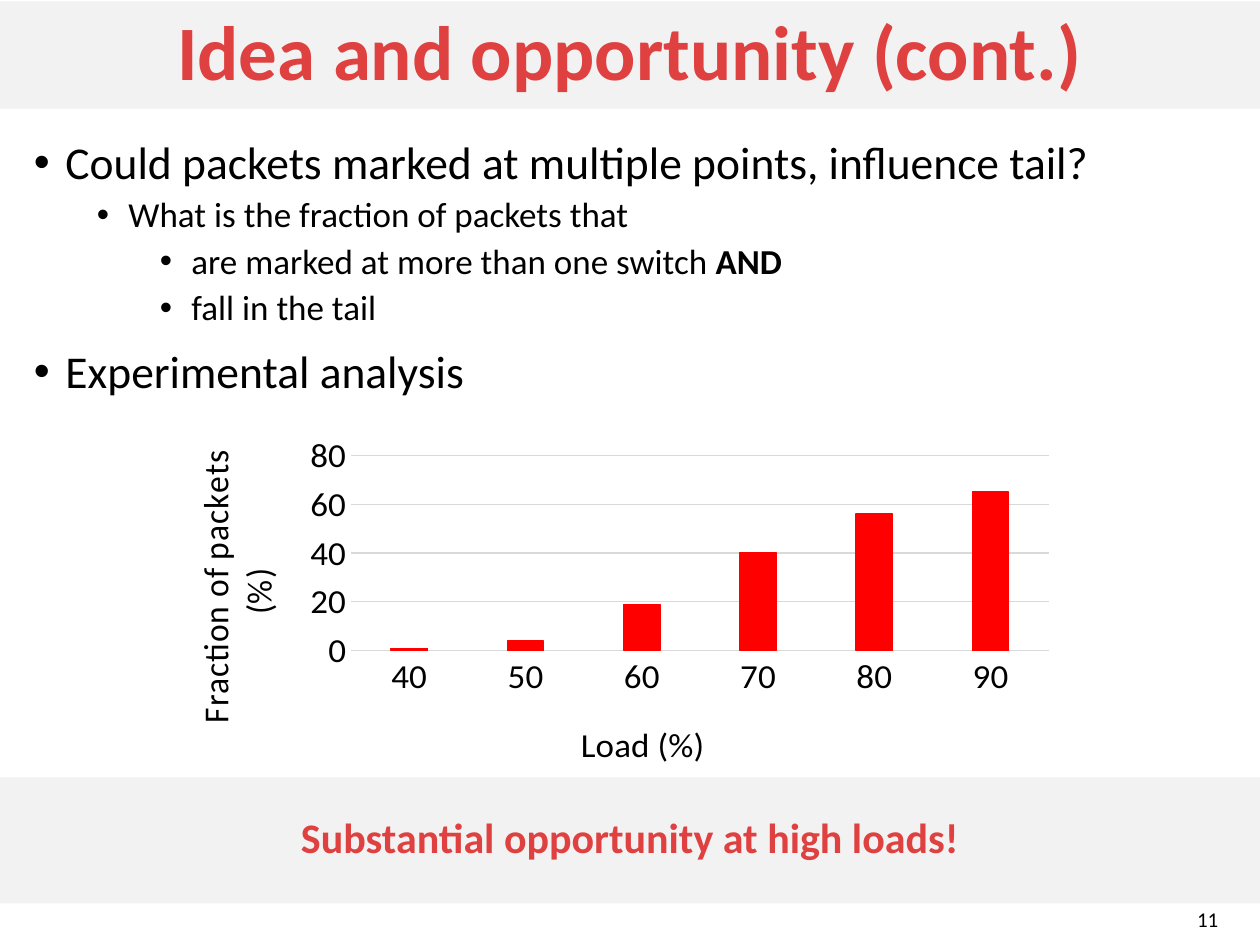
from lxml import etree
from pptx import Presentation
from pptx.chart.data import CategoryChartData
from pptx.dml.color import RGBColor
from pptx.enum.chart import XL_CHART_TYPE as CT, XL_TICK_MARK as TM
from pptx.enum.text import MSO_ANCHOR as MA, MSO_AUTO_SIZE as AS, PP_ALIGN as PA
from pptx.oxml import parse_xml
from pptx.oxml.ns import nsdecls, qn
from pptx.util import Cm, Pt

COLORS = {"band": "F2F2F2", "accent": "DF4141", "text": "000000",
          "grid": "D9D9D9", "bar": "FF0000"}


def rgb(name):
    return RGBColor.from_string(COLORS[name])


class SlideBuilder:
    font = "Calibri"
    sizes = (26, 20, 20)

    def __init__(self, prs):
        self.slide = prs.slides.add_slide(prs.slide_layouts[3])

    def style(self, font, size, color="text", bold=False):
        font.name, font.size, font.bold = self.font, Pt(size), bold
        font.color.rgb = rgb(color)

    def place(self, idx, box):
        sp = self.slide.placeholders[idx]
        sp.left, sp.top, sp.width, sp.height = (Cm(v) for v in box)
        sp.text_frame.auto_size = AS.NONE
        return sp

    def band(self, idx, box, text, size, before=0):
        sp = self.place(idx, box)
        sp.fill.solid()
        sp.fill.fore_color.rgb = rgb("band")
        tf = sp.text_frame
        tf.text = text
        tf.vertical_anchor = MA.MIDDLE
        p = tf.paragraphs[0]
        p.alignment, p.line_spacing, p.space_before = PA.CENTER, 0.9, Pt(before)
        pPr = p._p.get_or_add_pPr()
        pPr.set("marL", "0")
        pPr.set("indent", "0")
        etree.SubElement(pPr, qn("a:buNone"))
        self.style(p.runs[0].font, size, "accent", True)

    def bullets(self, idx, box, items):
        tf = self.place(idx, box).text_frame
        for i, (level, text, strong) in enumerate(items):
            p = tf.add_paragraph() if i else tf.paragraphs[0]
            p.text = text
            p.level, p.line_spacing = level, 0.9
            p.space_before = Pt(5 if level else 12)
            pPr = p._p.get_or_add_pPr()
            pPr.set("marL", str(Cm(0.635 + 1.27 * level)))
            pPr.set("indent", str(-Cm(0.635)))
            etree.SubElement(pPr, qn("a:buFont"), typeface="Arial")
            etree.SubElement(pPr, qn("a:buChar"), char="•")
            self.style(p.runs[0].font, self.sizes[level])
            if strong:
                r = p.add_run()
                r.text = strong
                self.style(r.font, self.sizes[level], bold=True)

    def label(self, box, text, size):
        tf = self.slide.shapes.add_textbox(*(Cm(v) for v in box)).text_frame
        tf.word_wrap, tf.vertical_anchor = True, MA.MIDDLE
        tf.text = text
        p = tf.paragraphs[0]
        p.alignment = PA.RIGHT
        self.style(p.runs[0].font, size)

    def layout(self, x, y, w=None, h=None):
        tags = [("xMode", "edge"), ("yMode", "edge"), ("x", x), ("y", y)]
        if w:
            tags = [("layoutTarget", "inner")] + tags + [("w", w), ("h", h)]
        parts = "".join(f'<c:{t} val="{v}"/>' for t, v in tags)
        return parse_xml(f'<c:layout {nsdecls("c")}><c:manualLayout>{parts}'
                         '</c:manualLayout></c:layout>')

    def axis(self, axis, title, x, y):
        tf = axis.axis_title.text_frame
        tf.text = title
        self.style(tf.paragraphs[0].runs[0].font, 20)
        el = axis.axis_title._element
        for old in el.findall(qn("c:layout")):
            el.remove(old)
        el.find(qn("c:tx")).addnext(self.layout(x, y))
        axis.major_tick_mark = axis.minor_tick_mark = TM.NONE
        self.style(axis.tick_labels.font, 20)

    def column_chart(self, box, cats, vals, x_title, y_title):
        data = CategoryChartData()
        data.categories = cats
        data.add_series("Series 1", vals)
        chart = self.slide.shapes.add_chart(
            CT.COLUMN_CLUSTERED, *(Cm(v) for v in box), data).chart
        chart.has_legend = chart.has_title = False
        self.style(chart.font, 10)
        x, y = chart.category_axis, chart.value_axis
        self.axis(x, x_title, 0.44, 0.87)
        self.axis(y, y_title, 0.02, 0.14)
        y.minimum_scale, y.maximum_scale, y.major_unit = 0, 80, 20
        y.format.line.fill.background()
        for line in (x.format.line, y.major_gridlines.format.line):
            line.color.rgb, line.width = rgb("grid"), Pt(0.75)
        plot = chart.plots[0]
        plot.gap_width, plot.overlap, plot.vary_by_categories = 219, -27, False
        fmt = plot.series[0].format
        fmt.fill.solid()
        fmt.fill.fore_color.rgb = fmt.line.color.rgb = rgb("bar")
        fmt.line.width = Pt(0.75)
        area = chart._chartSpace.chart.plotArea
        for old in area.findall(qn("c:layout")):
            area.remove(old)
        area.insert(0, self.layout(0.2, 0.14, 0.75, 0.55))


def main():
    prs = Presentation()
    prs.slide_width, prs.slide_height = Cm(25.4), Cm(19.05)
    s = SlideBuilder(prs)
    s.band(0, (0, 0.03, 25.4, 2.16), "Idea and opportunity (cont.)", 44)
    s.bullets(1, (0.43, 2.69, 24.56, 13.39), [
        (0, "Could packets marked at multiple points, influence tail?", ""),
        (1, "What is the fraction of packets that", ""),
        (2, "are marked at more than one switch ", "AND"),
        (2, "fall in the tail", ""),
        (0, "Experimental analysis", ""),
    ])
    s.label((22.78, 18.14, 2.03, 0.76), "11", 12)
    s.column_chart((3.33, 8.18, 18.75, 7.47),
                   ["40", "50", "60", "70", "80", "90"], (1, 4, 19, 40, 56, 65),
                   "Load (%)", "Fraction of packets (%)")
    s.band(2, (0, 15.67, 25.4, 2.54), "Substantial opportunity at high loads!", 24, 10)
    prs.save("out.pptx")


if __name__ == "__main__":
    main()
